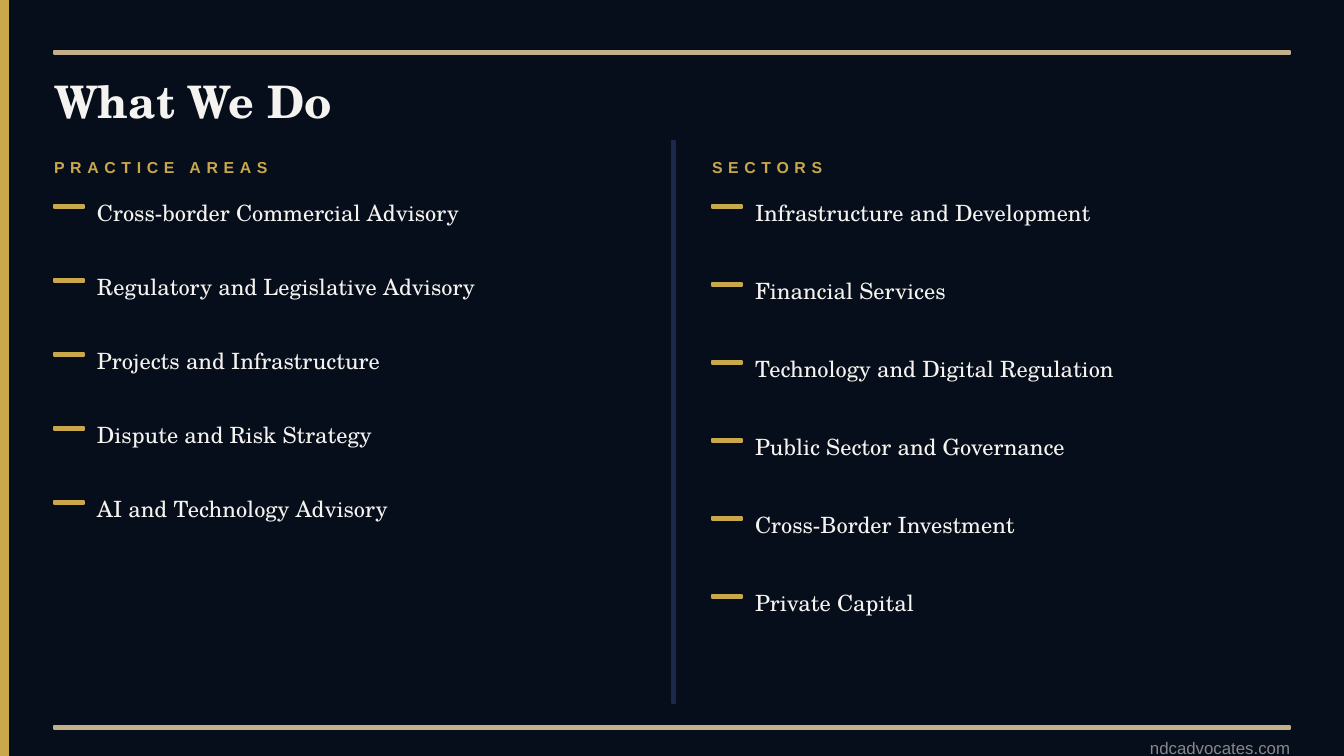
from dataclasses import dataclass

from pptx import Presentation
from pptx.dml.color import RGBColor
from pptx.enum.shapes import MSO_SHAPE
from pptx.enum.text import MSO_ANCHOR, MSO_AUTO_SIZE, PP_ALIGN
from pptx.shapes.autoshape import Shape
from pptx.slide import Slide
from pptx.util import Emu, Pt

RECTANGLE = MSO_SHAPE.RECTANGLE
MIDDLE = MSO_ANCHOR.MIDDLE
NO_AUTOFIT = MSO_AUTO_SIZE.NONE
LEFT, RIGHT = PP_ALIGN.LEFT, PP_ALIGN.RIGHT

NIGHT = RGBColor(0x06, 0x0E, 0x1B)
GOLD = RGBColor(0xC9, 0xA8, 0x4C)
SAND = RGBColor(0xC3, 0xAF, 0x8A)
NAVY = RGBColor(0x1B, 0x2A, 0x4A)
IVORY = RGBColor(0xF5, 0xF3, 0xEF)
GREY = RGBColor(0x88, 0x88, 0x88)

SERIF = "TeX Gyre Schola"
SANS = "Arial"

PX_PER_INCH = 134.4
SLIDE_WIDTH, SLIDE_HEIGHT = 1344, 756
MARGIN = 54
CONTENT_WIDTH = SLIDE_WIDTH - 2 * MARGIN
STROKE = 3
HEADING_TOP, HEADING_HEIGHT = 148, 38
FIRST_ITEM_TOP, ITEM_HEIGHT, ITEM_INDENT = 191, 44, 43
DASH_WIDTH, DASH_DROP = 30, 14


@dataclass(frozen=True)
class Box:
    left: int
    top: int
    width: int
    height: int


@dataclass(frozen=True)
class TextStyle:
    font: str
    size: float
    color: RGBColor
    bold: bool = False
    align: PP_ALIGN = LEFT
    tracking: int = 0


@dataclass(frozen=True)
class Column:
    heading: str
    left: int
    width: int
    pitch: int
    items: tuple[str, ...]


TITLE = TextStyle(SERIF, 24, IVORY, bold=True)
HEADING = TextStyle(SANS, 8.5, GOLD, bold=True, tracking=300)
ITEM = TextStyle(SERIF, 12, IVORY)
WEBSITE = TextStyle(SANS, 9, GREY, align=RIGHT)

COLUMNS = (
    Column("PRACTICE AREAS", MARGIN, 591, 74, (
        "Cross-border Commercial Advisory",
        "Regulatory and Legislative Advisory",
        "Projects and Infrastructure",
        "Dispute and Risk Strategy",
        "AI and Technology Advisory",
    )),
    Column("SECTORS", 712, 564, 78, (
        "Infrastructure and Development",
        "Financial Services",
        "Technology and Digital Regulation",
        "Public Sector and Governance",
        "Cross-Border Investment",
        "Private Capital",
    )),
)


def px(length: int) -> Emu:
    return Emu(round(length * 914400 / PX_PER_INCH))


def place(shape: Shape, box: Box) -> None:
    shape.left, shape.top = px(box.left), px(box.top)
    shape.width, shape.height = px(box.width), px(box.height)


def add_bar(slide: Slide, box: Box, color: RGBColor) -> None:
    bar = slide.shapes.add_shape(RECTANGLE, 0, 0, 0, 0)
    place(bar, box)
    bar.shadow.inherit = False
    bar.fill.solid()
    bar.fill.fore_color.rgb = color
    bar.line.color.rgb = color
    bar.line.width = Pt(1)


def write(shape: Shape, box: Box, text: str, style: TextStyle) -> None:
    place(shape, box)
    frame = shape.text_frame
    frame.word_wrap = True
    frame.auto_size = NO_AUTOFIT
    frame.vertical_anchor = MIDDLE
    frame.margin_left = frame.margin_right = 0
    frame.margin_top = frame.margin_bottom = 0
    paragraph = frame.paragraphs[0]
    paragraph.alignment = style.align
    run = paragraph.add_run()
    run.text = text
    font = paragraph.font
    font.name, font.size, font.bold = style.font, Pt(style.size), style.bold
    font.color.rgb = style.color
    if style.tracking:
        run.font._element.set("spc", str(style.tracking))


def add_text(slide: Slide, box: Box, text: str, style: TextStyle) -> None:
    write(slide.shapes.add_textbox(0, 0, 0, 0), box, text, style)


def add_column(slide: Slide, column: Column) -> None:
    heading_box = Box(column.left, HEADING_TOP, column.width, HEADING_HEIGHT)
    add_text(slide, heading_box, column.heading, HEADING)
    for index, item in enumerate(column.items):
        top = FIRST_ITEM_TOP + index * column.pitch
        add_bar(slide, Box(column.left, top + DASH_DROP, DASH_WIDTH, STROKE), GOLD)
        item_box = Box(column.left + ITEM_INDENT, top, column.width - 40, ITEM_HEIGHT)
        add_text(slide, item_box, item, ITEM)


def main() -> None:
    deck = Presentation()
    deck.slide_width, deck.slide_height = px(SLIDE_WIDTH), px(SLIDE_HEIGHT)
    slide = deck.slides.add_slide(deck.slide_layouts[5])
    slide.background.fill.solid()
    slide.background.fill.fore_color.rgb = NIGHT

    add_bar(slide, Box(0, 0, 8, SLIDE_HEIGHT), GOLD)
    add_bar(slide, Box(MARGIN, 51, CONTENT_WIDTH, STROKE), SAND)
    write(slide.shapes.title, Box(MARGIN, 67, CONTENT_WIDTH, 67), "What We Do", TITLE)
    add_bar(slide, Box(672, 141, STROKE, 562), NAVY)
    for column in COLUMNS:
        add_column(slide, column)
    add_bar(slide, Box(MARGIN, 726, CONTENT_WIDTH, STROKE), SAND)
    add_text(slide, Box(MARGIN, 731, CONTENT_WIDTH, 34), "ndcadvocates.com", WEBSITE)

    deck.save("out.pptx")


if __name__ == "__main__":
    main()
